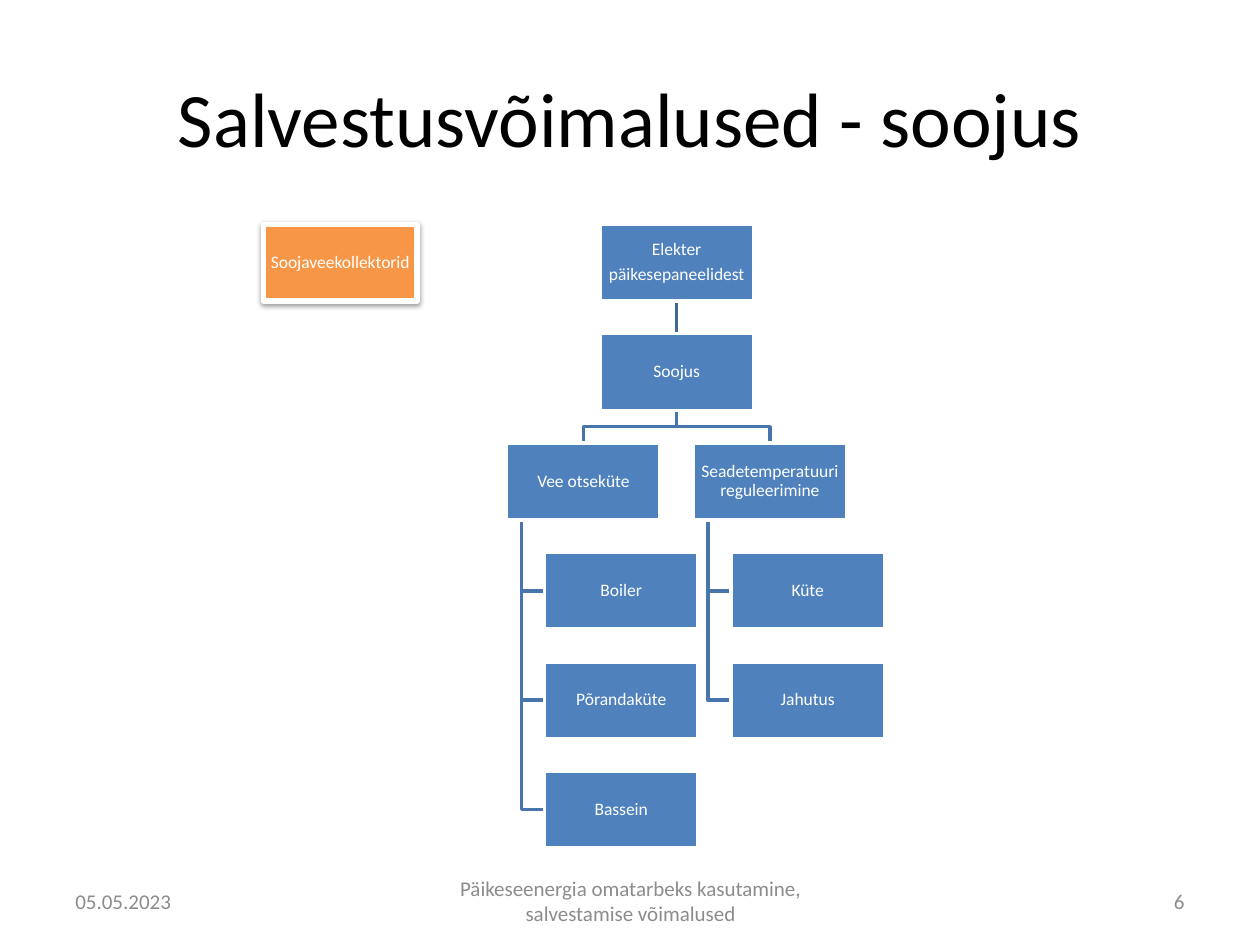
from dataclasses import dataclass

from lxml import etree
from pptx import Presentation
from pptx.dml.color import RGBColor
from pptx.enum.shapes import MSO_CONNECTOR, MSO_SHAPE
from pptx.enum.text import MSO_ANCHOR, PP_ALIGN
from pptx.oxml import parse_xml
from pptx.oxml.ns import nsdecls, qn
from pptx.util import Inches, Pt

RECTANGLE = MSO_SHAPE.RECTANGLE
STRAIGHT = MSO_CONNECTOR.STRAIGHT
MIDDLE = MSO_ANCHOR.MIDDLE
LEFT, CENTER, RIGHT = PP_ALIGN.LEFT, PP_ALIGN.CENTER, PP_ALIGN.RIGHT


@dataclass(frozen=True)
class Theme:
    font: str = "Calibri"
    black: str = "000000"
    white: str = "FFFFFF"
    grey: str = "8C8C8C"
    blue: str = "4F81BD"
    orange: str = "F79646"
    trunk: str = "3F6797"
    branch: str = "4875AC"
    title_size: int = 44
    box_size: int = 10
    footer_size: int = 12
    line_width: int = 2
    accent_width: int = 3


@dataclass(frozen=True)
class Node:
    left: float
    row: int
    lines: tuple[str, ...]

    @property
    def top(self) -> float:
        return FIRST_TOP + self.row * ROW_PITCH

    @property
    def bottom(self) -> float:
        return self.top + BOX_HEIGHT

    @property
    def center(self) -> float:
        return self.left + BOX_WIDTH / 2

    @property
    def middle(self) -> float:
        return self.top + BOX_HEIGHT / 2


@dataclass(frozen=True)
class Label:
    text: str
    left: float
    top: float
    width: float
    height: float
    align: PP_ALIGN
    size: int
    color: str


THEME = Theme()
BOX_WIDTH, BOX_HEIGHT = 1.22, 0.61
FIRST_TOP, LAST_TOP = 1.78, 6.12
ROW_PITCH = (LAST_TOP - FIRST_TOP) / 5
INDENT, SPINE_OFFSET = 0.3, 0.12

COLLECTORS = Node(2.09, 0, ("Soojaveekollektorid",))
ELECTRICITY = Node(4.76, 0, ("Elekter", "päikesepaneelidest"))
HEAT = Node(4.76, 1, ("Soojus",))
BRANCHES = {
    Node(4.02, 2, ("Vee otseküte",)): ("Boiler", "Põrandaküte", "Bassein"),
    Node(5.5, 2, ("Seadetemperatuuri reguleerimine",)): ("Küte", "Jahutus"),
}
LABELS = (
    Label("Salvestusvõimalused - soojus", 0.5, 0.3, 9, 1.25,
          CENTER, THEME.title_size, THEME.black),
    Label("05.05.2023", 0.5, 6.95, 2.33, 0.4,
          LEFT, THEME.footer_size, THEME.grey),
    Label("Päikeseenergia omatarbeks kasutamine,\vsalvestamise võimalused",
          3.42, 6.95, 3.17, 0.4, CENTER, THEME.footer_size, THEME.grey),
    Label("6", 7.17, 6.95, 2.33, 0.4,
          RIGHT, THEME.footer_size, THEME.grey),
)


def format_paragraph(para, text: str, align: PP_ALIGN, size: int, color: str) -> None:
    para.text = text
    para.alignment = align
    for name, value in {"name": THEME.font, "size": Pt(size)}.items():
        setattr(para.font, name, value)
    para.font.color.rgb = RGBColor.from_string(color)
    for span in para.runs:
        for name, value in {"name": THEME.font, "size": Pt(size)}.items():
            setattr(span.font, name, value)
        span.font.color.rgb = RGBColor.from_string(color)


def set_line(shape, color: str, width: int) -> None:
    shape.line.color.rgb = RGBColor.from_string(color)
    shape.line.width = Pt(width)


def add_label(page, label: Label) -> None:
    box = page.shapes.add_textbox(*map(Inches, (label.left, label.top, label.width, label.height)))
    box.text_frame.word_wrap = True
    box.text_frame.vertical_anchor = MIDDLE
    format_paragraph(box.text_frame.paragraphs[0], label.text, label.align, label.size, label.color)


def add_box(page, node: Node, fill: str, line_width: int):
    box = page.shapes.add_shape(
        RECTANGLE, *map(Inches, (node.left, node.top, BOX_WIDTH, BOX_HEIGHT)))
    box.shadow.inherit = False
    box.fill.solid()
    box.fill.fore_color.rgb = RGBColor.from_string(fill)
    set_line(box, THEME.white, line_width)
    frame = box.text_frame
    frame_format = {"word_wrap": True, "vertical_anchor": MIDDLE}
    margins = dict.fromkeys(
        ("margin_left", "margin_top", "margin_right", "margin_bottom"), Inches(0.01))
    for name, value in (frame_format | margins).items():
        setattr(frame, name, value)
    for index, text in enumerate(node.lines):
        para = frame.add_paragraph() if index else frame.paragraphs[0]
        format_paragraph(para, text, CENTER, THEME.box_size, THEME.white)
        para.line_spacing = 0.9
        para.space_after = Pt(0.35 * THEME.box_size)
    return box


def add_drop_shadow(box) -> None:
    effects = box.element.spPr.find(qn("a:effectLst"))
    effects.append(parse_xml(
        f'<a:outerShdw {nsdecls("a")} blurRad="{Pt(3.1)}" dist="{Pt(1.6)}" '
        f'dir="5400000" rotWithShape="0"><a:srgbClr val="{THEME.black}">'
        '<a:alpha val="38000"/></a:srgbClr></a:outerShdw>'))


def add_elbow(page, *points: tuple[float, float]) -> None:
    start, *rest = [(Inches(x), Inches(y)) for x, y in points]
    builder = page.shapes.build_freeform(*start)
    builder.add_line_segments(rest, close=False)
    elbow = builder.convert_to_shape()
    elbow.shadow.inherit = False
    elbow.fill.background()
    set_line(elbow, THEME.branch, THEME.line_width)


def add_trunk(page, upper, lower) -> None:
    """Join two boxes, keeping the line behind their white borders."""
    trunk = page.shapes.add_connector(STRAIGHT, 0, 0, 0, 0)
    trunk.begin_connect(upper, 2)
    trunk.end_connect(lower, 0)
    set_line(trunk, THEME.trunk, THEME.line_width)
    etree.SubElement(trunk.element.spPr, qn("a:effectLst"))
    upper.element.addprevious(trunk.element)


def add_tree(page) -> None:
    nodes = []
    for parent, names in BRANCHES.items():
        turn = (HEAT.bottom + parent.top) / 2
        add_elbow(page, (HEAT.center, HEAT.bottom), (HEAT.center, turn),
                  (parent.center, turn), (parent.center, parent.top))
        nodes.append(parent)
        spine = parent.left + SPINE_OFFSET
        for row, name in enumerate(names, parent.row + 1):
            child = Node(parent.left + INDENT, row, (name,))
            add_elbow(page, (spine, parent.bottom), (spine, child.middle),
                      (child.left, child.middle))
            nodes.append(child)
    add_drop_shadow(add_box(page, COLLECTORS, THEME.orange, THEME.accent_width))
    upper, lower = (add_box(page, node, THEME.blue, THEME.line_width)
                    for node in (ELECTRICITY, HEAT))
    add_trunk(page, upper, lower)
    for node in nodes:
        add_box(page, node, THEME.blue, THEME.line_width)


def main() -> None:
    deck = Presentation()
    deck.slide_width, deck.slide_height = Inches(10), Inches(7.5)
    page = deck.slides.add_slide(deck.slide_layouts[6])
    title, *footers = LABELS
    add_label(page, title)
    add_tree(page)
    for footer in footers:
        add_label(page, footer)
    deck.save("out.pptx")


if __name__ == "__main__":
    main()
